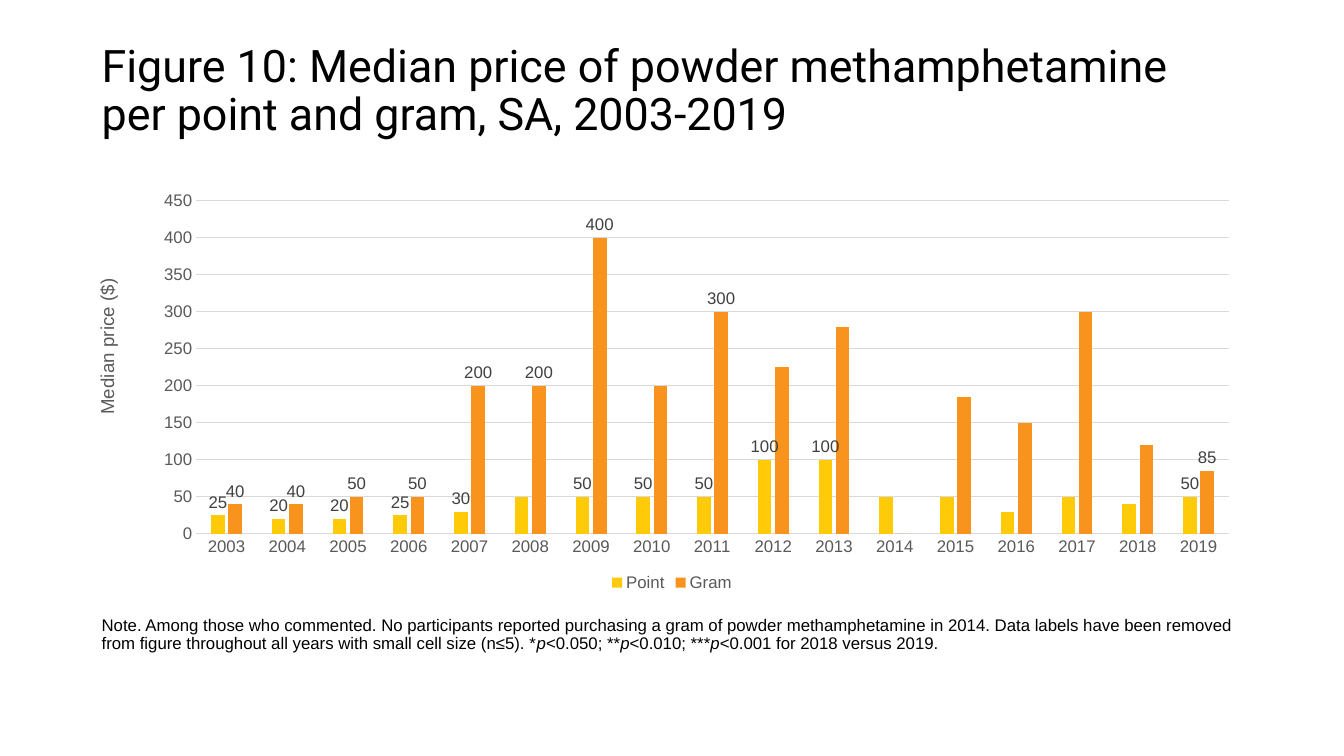
import pptx
import pptx.chart.data
import pptx.dml.color
import pptx.enum.chart
import pptx.enum.shapes
import pptx.enum.text
import pptx.oxml
import pptx.oxml.ns
import pptx.util
from lxml import etree

Inches, Pt = pptx.util.Inches, pptx.util.Pt
qn = pptx.oxml.ns.qn

THEME = {
    "heading_font": "Roboto", "body_font": "Arial",
    "black": "000000", "axis": "595959", "label": "404040", "grid": "D9D9D9",
    "point": "FFCA08", "gram": "F8931D", "rule": "FFFFFF",
    "heading_size": 32, "body_size": 12, "axis_title_size": 13.3,
}

HEADING = "Figure 10: Median price of powder methamphetamine per point and gram, SA, 2003-2019"
NOTE = [
    ("Note. Among those who commented. No participants reported purchasing a gram of powder "
     "methamphetamine in 2014. Data labels have been removed from figure throughout all years "
     "with small cell size (n≤5). *", False),
    ("p", True), ("<0.050; **", False),
    ("p", True), ("<0.010; ***", False),
    ("p", True), ("<0.001 for 2018 versus 2019.", False),
]
YEARS = list(range(2003, 2020))
PRICES = [
    {"name": "Point", "color": "point", "unlabelled": [2008, *range(2014, 2019)],
     "values": [25, 20, 20, 25, 30, 50, 50, 50, 50, 100, 100, 50, 50, 30, 50, 40, 50]},
    {"name": "Gram", "color": "gram", "unlabelled": [2010, *range(2012, 2019)],
     "values": [40, 40, 50, 50, 200, 200, 400, 200, 300, 225, 280, 0, 185, 150, 300, 120, 85]},
]
PRICE_TITLE = "Median price ($)"


def rgb(name):
    return pptx.dml.color.RGBColor.from_string(THEME[name])


def style_font(font, size, color, face="body_font", italic=False):
    font.name = THEME[face]
    font.size = Pt(THEME[size])
    font.color.rgb = rgb(color)
    font.bold = False
    font.italic = italic


def add_text(slide, box, runs, size="body_size", face="body_font", anchor="TOP"):
    frame = slide.shapes.add_textbox(*map(Inches, box)).text_frame
    frame.word_wrap = True
    frame.vertical_anchor = pptx.enum.text.MSO_ANCHOR[anchor]
    paragraph = frame.paragraphs[0]
    paragraph.line_spacing = 0.9
    for text, italic in runs:
        run = paragraph.add_run()
        run.text = text
        style_font(run.font, size, "black", face, italic)


def add_heading_rule(slide, ends):
    rule = slide.shapes.add_connector(
        pptx.enum.shapes.MSO_CONNECTOR.STRAIGHT, *map(Inches, ends))
    rule.line.color.rgb = rgb("rule")
    rule.line.width = Pt(4.5)
    etree.SubElement(rule._element.spPr, qn("a:effectLst"))


def place(element, index, **settings):
    for old in element.findall(qn("c:layout")):
        element.remove(old)
    layout = etree.Element(qn("c:layout"))
    manual = etree.SubElement(layout, qn("c:manualLayout"))
    for tag, value in settings.items():
        etree.SubElement(manual, qn("c:" + tag)).set("val", str(value))
    element.insert(index, layout)


def hide_label(labels, index):
    hidden = etree.Element(qn("c:dLbl"))
    etree.SubElement(hidden, qn("c:idx")).set("val", str(index))
    etree.SubElement(hidden, qn("c:delete")).set("val", "1")
    labels.insert(0, hidden)


def style_axes(chart):
    price, year = chart.value_axis, chart.category_axis
    for axis in (price, year):
        axis.major_tick_mark = axis.minor_tick_mark = pptx.enum.chart.XL_TICK_MARK.NONE
        style_font(axis.tick_labels.font, "body_size", "axis")
    price.minimum_scale, price.maximum_scale, price.major_unit = 0, 450, 50
    price.format.line.fill.background()
    for line in (year.format.line, price.major_gridlines.format.line):
        line.color.rgb = rgb("grid")
        line.width = Pt(0.75)
    title = price.axis_title
    frame = title.text_frame
    run = frame.paragraphs[0].add_run()
    run.text = PRICE_TITLE
    style_font(run.font, "axis_title_size", "axis")
    body = frame._txBody.find(qn("a:bodyPr"))
    body.set("rot", "-5400000")
    body.set("vert", "horz")
    place(title._element, 1, xMode="edge", yMode="edge", x=0, y=0.22)


def add_price_chart(slide, box):
    data = pptx.chart.data.CategoryChartData()
    data.categories = [str(year) for year in YEARS]
    for price in PRICES:
        data.add_series(price["name"], price["values"])
    chart = slide.shapes.add_chart(
        pptx.enum.chart.XL_CHART_TYPE.COLUMN_CLUSTERED, *map(Inches, box), data).chart
    chart.has_title = False
    style_font(chart.font, "body_size", "black")
    chart.has_legend = True
    chart.legend.position = pptx.enum.chart.XL_LEGEND_POSITION.BOTTOM
    chart.legend.include_in_layout = False
    style_font(chart.legend.font, "body_size", "axis")
    style_axes(chart)
    plot = chart.plots[0]
    plot.gap_width, plot.overlap, plot.vary_by_categories = 219, -27, False
    for series, price in zip(plot.series, PRICES):
        series.format.fill.solid()
        series.format.fill.fore_color.rgb = rgb(price["color"])
        labels = series.data_labels
        labels.show_value = True
        labels.position = pptx.enum.chart.XL_LABEL_POSITION.OUTSIDE_END
        style_font(labels.font, "body_size", "label")
        for year in reversed(price["unlabelled"]):
            hide_label(labels._element, YEARS.index(year))
    area = chart._chartSpace.find(".//" + qn("c:plotArea"))
    place(area, 0, layoutTarget="inner", xMode="edge", yMode="edge",
          x=0.09, y=0.04, w=0.89, h=0.81)


def main():
    deck = pptx.Presentation()
    deck.slide_width, deck.slide_height = Inches(13.33), Inches(7.5)
    slide = deck.slides.add_slide(deck.slide_layouts[6])
    add_heading_rule(slide, (0, 1.58, 11.85, 1.58))
    add_text(slide, (0.91, 0.4, 11.5, 1.03), [(HEADING, False)],
             size="heading_size", face="heading_font", anchor="MIDDLE")
    add_text(slide, (0.91, 6.07, 11.5, 0.47), NOTE)
    add_price_chart(slide, (0.91, 1.83, 11.51, 4.08))
    deck.save("out.pptx")


if __name__ == "__main__":
    main()
